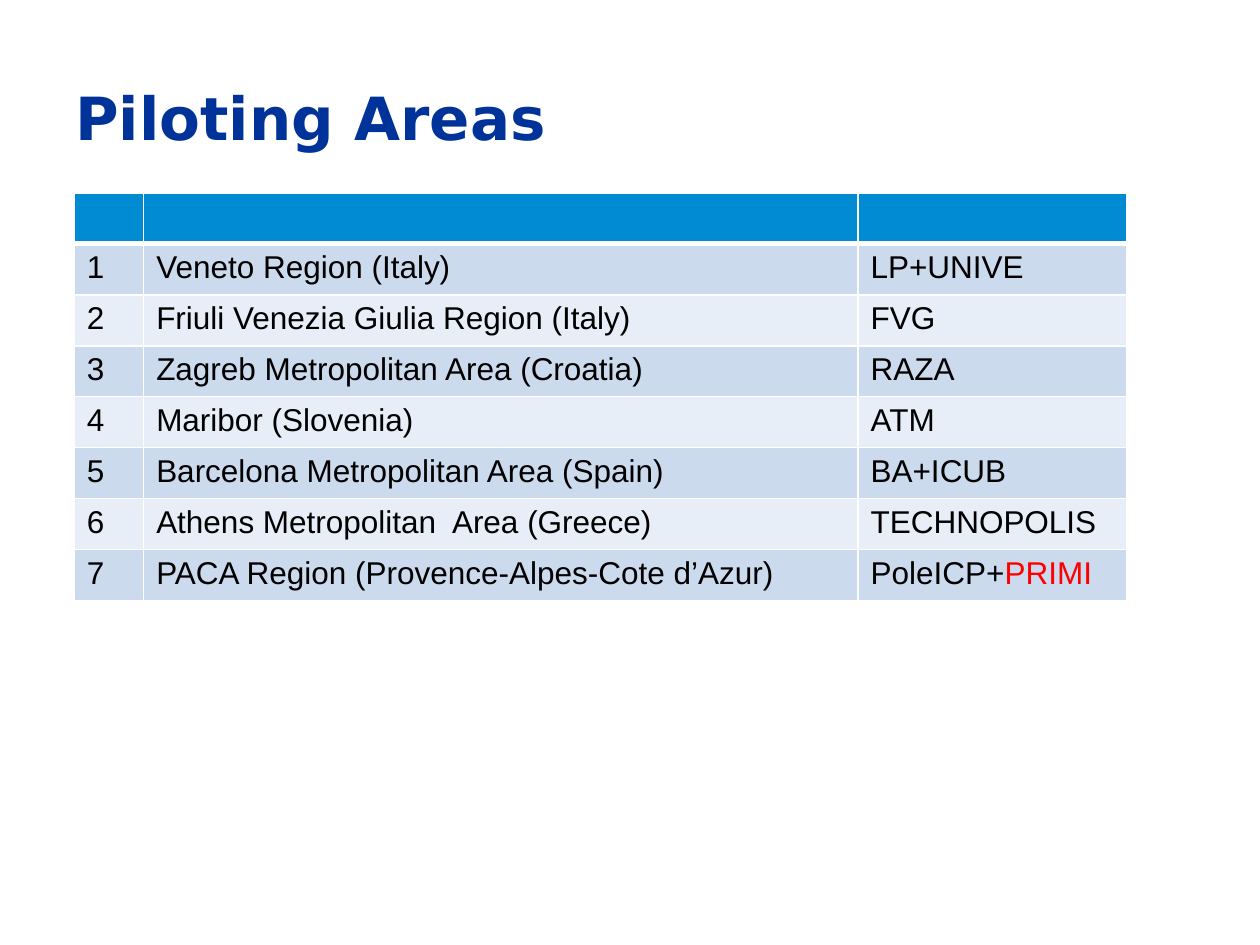
from pptx import Presentation
from pptx.dml.color import RGBColor
from pptx.enum import text
from pptx.oxml import parse_xml
from pptx.oxml.ns import nsdecls
from pptx.util import Inches, Pt


def style(font, size, face, color):
    font.size = Pt(size)
    font.name = face
    font.color.rgb = RGBColor.from_string(color)


def border(cell, side, width):
    """Draw a white line on one side: L, R, T or B."""
    cell._tc.get_or_add_tcPr().append(parse_xml(
        f'<a:ln{side} {nsdecls("a")} w="{Pt(width)}"><a:solidFill>'
        f'<a:srgbClr val="FFFFFF"/></a:solidFill></a:ln{side}>'))


deck = Presentation()
deck.slide_width, deck.slide_height = Inches(10), Inches(7.5)
slide = deck.slides.add_slide(deck.slide_layouts[6])

# Title
title = slide.shapes.add_textbox(Inches(0.5), Inches(0.3), Inches(9), Inches(1.25))
frame = title.text_frame
frame.word_wrap = True
frame.vertical_anchor = text.MSO_ANCHOR.MIDDLE
frame.text = "Piloting Areas"
font = frame.paragraphs[0].runs[0].font
style(font, 34, "DejaVu Sans", "003399")
font.bold = True

# Pilot areas and their partners, each partner entry a list of (text, colour) runs
areas = [
    ("Veneto Region (Italy)", [("LP+UNIVE", "000000")]),
    ("Friuli Venezia Giulia Region (Italy)", [("FVG", "000000")]),
    ("Zagreb Metropolitan Area (Croatia)", [("RAZA", "000000")]),
    ("Maribor (Slovenia)", [("ATM", "000000")]),
    ("Barcelona Metropolitan Area (Spain)", [("BA+ICUB", "000000")]),
    ("Athens Metropolitan  Area (Greece)", [("TECHNOPOLIS", "000000")]),
    ("PACA Region (Provence-Alpes-Cote d’Azur)",
     [("PoleICP+", "000000"), ("PRIMI", "FF0000")]),
]
rows = [[[], [], []]]
for num, (area, partner) in enumerate(areas, 1):
    rows.append([[(str(num), "000000")], [(area, "000000")], partner])

# Table
table = slide.shapes.add_table(len(rows), 3, Inches(0.59), Inches(1.53),
                               Inches(8.35), Inches(3.24)).table
for col, width in zip(table.columns, (0.55, 5.67, 2.13)):
    col.width = Inches(width)

for r, row in enumerate(rows):
    shade = "008BD2" if r == 0 else ("E7EEF7", "CCDAEE")[r % 2]
    for c, runs in enumerate(row):
        cell = table.cell(r, c)
        for side in "LRTB":
            thick = (r == 0 and side == "B") or (r == 1 and side == "T")
            border(cell, side, 3 if thick else 1)
        cell.fill.solid()
        cell.fill.fore_color.rgb = RGBColor.from_string(shade)
        para = cell.text_frame.paragraphs[0]
        for words, color in runs:
            run = para.add_run()
            run.text = words
            style(run.font, 18, "Arial", color)

deck.save("out.pptx")
